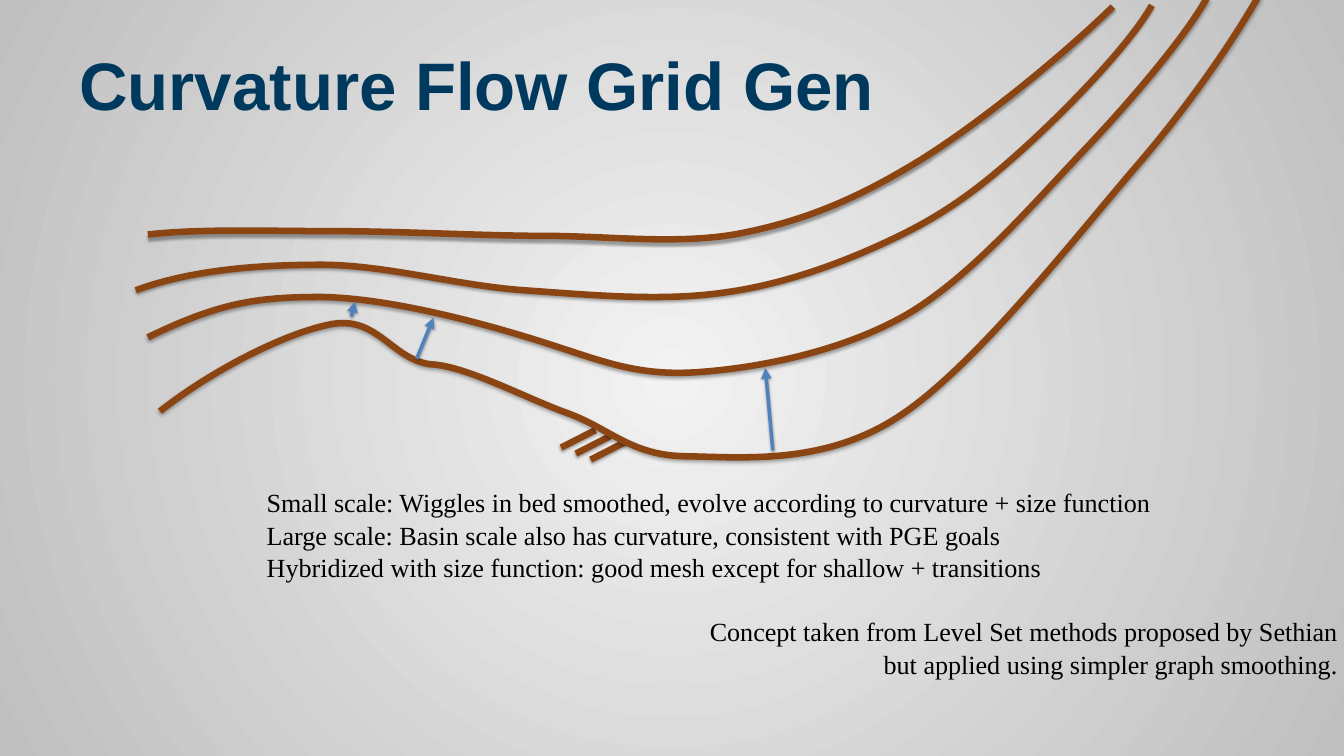
from lxml import etree
from pptx import Presentation, util as u
from pptx.dml import color as clr
from pptx.enum import shapes, text
from pptx.oxml import ns

HUES = {"pale": "F2F2F2", "gray": "BFBFBF", "bed": "8B4513",
        "arrow": "4F81BD", "title": "00395E", "body": "000000"}
RGB = {name: clr.RGBColor.from_string(hue) for name, hue in HUES.items()}


def add(parent, tag, **attrs):
    return etree.SubElement(parent, ns.qn(tag), {k: str(v) for k, v in attrs.items()})


def stroke(shape, hue, width, alpha, dist):
    """Colour the line and give it a soft shadow below."""
    shape.line.color.rgb = RGB[hue]
    shape.line.width = u.Pt(width)
    shade = add(add(shape.element.spPr, "a:effectLst"), "a:outerShdw", blurRad=u.Pt(3.1),
                dist=u.Pt(dist), dir=90 * 60000, rotWithShape=0)
    add(add(shade, "a:srgbClr", val="000000"), "a:alpha", val=alpha * 1000)


deck = Presentation()
deck.slide_width, deck.slide_height = u.Inches(20), u.Inches(11.25)
slide = deck.slides.add_slide(deck.slide_layouts[6])

# Background: radial gradient, pale in the centre
fill = slide.background.fill
fill.gradient()
for stop, hue, pos in zip(fill.gradient_stops, ("pale", "gray"), (0, 1)):
    stop.color.rgb = RGB[hue]
    stop.position = pos
grad = slide.element.find(".//" + ns.qn("a:gradFill"))
grad.remove(grad.find(ns.qn("a:lin")))
ring = add(grad, "a:path", path="circle")
add(ring, "a:fillToRect", l=50000, t=50000, r=50000, b=50000)

# Hatch marks under the bed
hatch = slide.shapes.add_group_shape()
for i in range(3):
    x, y = 8.35 + 0.22 * i, 6.66 + 0.09 * i
    mark = hatch.shapes.add_connector(
        shapes.MSO_CONNECTOR.STRAIGHT, u.Inches(x), u.Inches(y),
        u.Inches(x + 0.51), u.Inches(y - 0.26))
    stroke(mark, "bed", 7, 35, 1.8)

# Grid curves from the bed upwards: a start, then three points per Bezier piece
CURVES = [
    [(2.38, 6.12), (3.18, 5.49), (4.28, 4.94), (4.95, 4.82), (5.62, 4.71), (5.83, 5.34),
     (6.4, 5.42), (6.93, 5.44), (7.81, 5.92), (8.45, 6.15), (9.08, 6.38), (9.39, 6.78),
     (10.21, 6.79), (11.02, 6.8), (12.23, 6.93), (13.34, 6.22), (14.46, 5.51),
     (15.98, 3.56), (16.88, 2.51), (17.78, 1.47), (18.41, 0.5), (18.73, -0.06)],
    [(2.2, 5.02), (3.25, 4.51), (3.81, 4.42), (4.77, 4.42), (5.73, 4.43), (7.05, 4.77),
     (7.98, 5.06), (8.91, 5.35), (9.44, 5.6), (10.36, 5.54), (11.27, 5.48), (12.5, 5.24),
     (13.46, 4.7), (14.42, 4.15), (15.36, 3.05), (16.11, 2.26), (16.86, 1.47),
     (17.65, 0.53), (17.96, -0.03)],
    [(2.02, 4.32), (2.83, 4.02), (3.82, 3.94), (4.78, 3.94), (5.74, 3.94), (6.8, 4.25),
     (7.8, 4.32), (8.8, 4.39), (9.86, 4.49), (10.8, 4.35), (11.74, 4.22), (12.67, 3.86),
     (13.42, 3.49), (14.17, 3.12), (14.7, 2.7), (15.32, 2.13), (15.94, 1.56),
     (16.83, 0.64), (17.14, 0.08)],
    [(2.2, 3.49), (3, 3.4), (4, 3.44), (4.96, 3.44), (5.92, 3.44), (6.97, 3.5),
     (7.98, 3.51), (8.98, 3.5), (10.04, 3.65), (10.98, 3.48), (11.91, 3.3), (12.67, 3),
     (13.6, 2.44), (14.53, 1.88), (15.8, 0.84), (16.56, 0.1)],
]
for points in CURVES:
    start, *rest = [(u.Inches(x), u.Inches(y)) for x, y in points]
    pen = slide.shapes.build_freeform(*start)
    pen.add_line_segments(rest, close=False)
    curve = pen.convert_to_shape()
    curve.fill.background()
    stroke(curve, "bed", 7, 35, 1.8)
    # Turn every three straight segments into one cubic piece
    legs = list(curve.element.iter(ns.qn("a:lnTo")))
    track = legs[0].getparent()
    for i in range(0, len(legs), 3):
        cubic = add(track, "a:cubicBezTo")
        for leg in legs[i:i + 3]:
            cubic.append(leg[0])
            track.remove(leg)

# Arrows from the bed to the next curve
for x1, y1, x2, y2 in [(11.5, 6.7, 11.39, 5.48), (5.23, 4.71, 5.28, 4.49),
                       (6.2, 5.34, 6.45, 4.73)]:
    arrow = slide.shapes.add_connector(
        shapes.MSO_CONNECTOR.STRAIGHT, u.Inches(x1), u.Inches(y1), u.Inches(x2), u.Inches(y2))
    stroke(arrow, "arrow", 3.75, 38, 1.6)
    add(arrow.element.spPr.find(ns.qn("a:ln")), "a:tailEnd", type="triangle")

# Title
frame = slide.shapes.add_textbox(
    u.Inches(1), u.Inches(0.45), u.Inches(18), u.Inches(1.88)).text_frame
frame.word_wrap = True
frame.margin_left = frame.margin_right = u.Inches(0.18)
frame.margin_top = u.Inches(0.19)
title = frame.paragraphs[0]
title.text = "Curvature Flow Grid Gen"
title.font.name, title.font.size, title.font.bold = "Arial", u.Pt(72), True
title.font.color.rgb = RGB["title"]

# Notes on scale, then the source of the concept at the right
NOTES = [
    "Small scale: Wiggles in bed smoothed, evolve according to curvature + size function",
    "Large scale: Basin scale also has curvature, consistent with PGE goals",
    "Hybridized with size function: good mesh except for shallow + transitions",
    "Concept taken from Level Set methods proposed by Sethian",
    "but applied using simpler graph smoothing.",
]
frame = slide.shapes.add_textbox(
    u.Inches(3.87), u.Inches(7.17), u.Inches(16.13), u.Inches(3.4)).text_frame
frame.word_wrap = True
for i, note in enumerate(NOTES):
    para = frame.paragraphs[0] if i == 0 else frame.add_paragraph()
    para.text = note
    para.line_spacing = 1.04
    para.alignment = text.PP_ALIGN.LEFT if i < 3 else text.PP_ALIGN.RIGHT
    if i == 3:
        para.space_before = u.Pt(33.5)
    para.font.name, para.font.size = "Times New Roman", u.Pt(28)
    para.font.color.rgb = RGB["body"]

deck.save("out.pptx")
